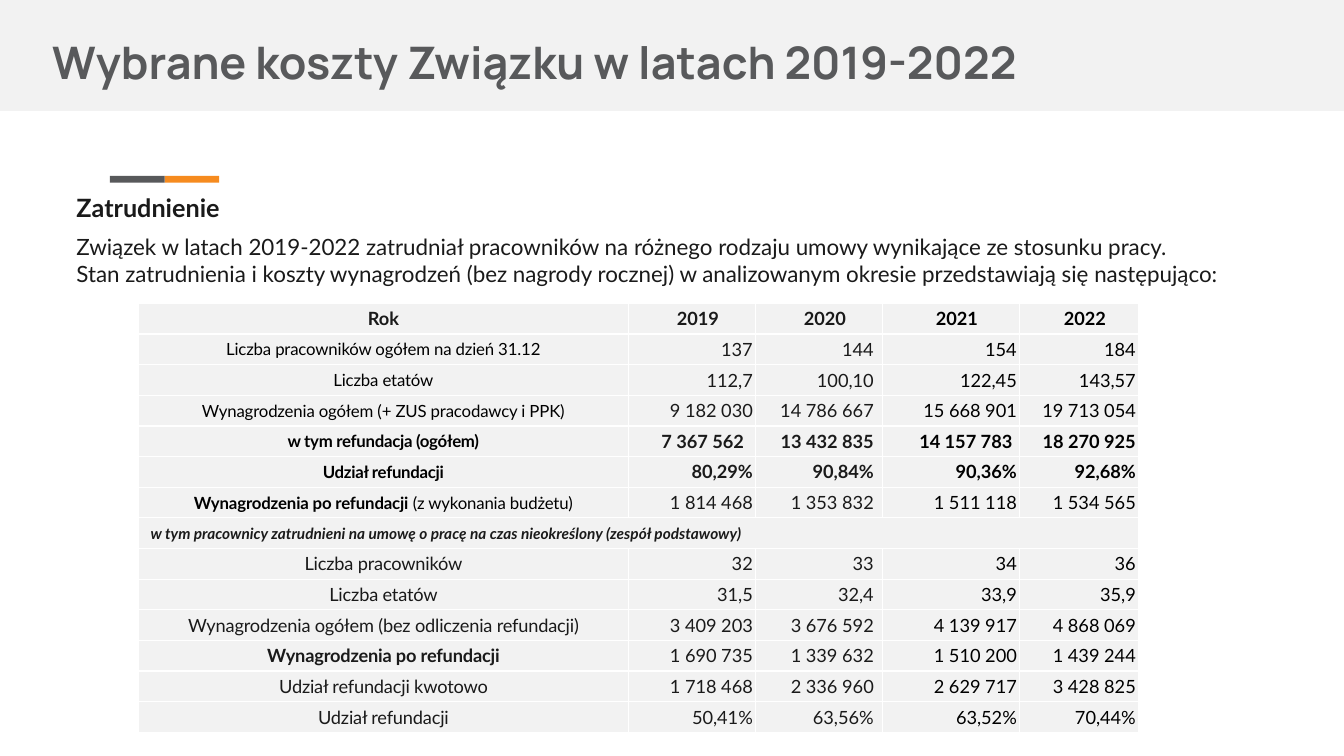
from lxml import etree
from pptx import Presentation
from pptx.dml.color import RGBColor
from pptx.enum.shapes import MSO_SHAPE
from pptx.enum.text import MSO_ANCHOR, PP_ALIGN
from pptx.oxml.ns import qn
from pptx.util import Pt

RECT = MSO_SHAPE.RECTANGLE
MIDDLE = MSO_ANCHOR.MIDDLE
LEFT, CENTER, RIGHT = PP_ALIGN.LEFT, PP_ALIGN.CENTER, PP_ALIGN.RIGHT

COLORS = {"panel": "F2F2F2", "orange": "F68B1F", "gray": "58595B",
          "ink": "1A1A1A", "black": "000000", "white": "FFFFFF"}

INTRO = ("Związek w latach 2019-2022 zatrudniał pracowników na różnego rodzaju "
         "umowy wynikające ze stosunku pracy.\v"
         "Stan zatrudnienia i koszty wynagrodzeń (bez nagrody rocznej) w "
         "analizowanym okresie przedstawiają się następująco:")

# Table content: label runs as (text, bold), yearly values, values in bold
YEARS = ("2019", "2020", "2021", "2022")
TOTAL_ROWS = [
    ([("Liczba pracowników ogółem na dzień 31.12", False)],
     ("137", "144", "154", "184"), False),
    ([("Liczba etatów", False)],
     ("112,7", "100,10", "122,45", "143,57"), False),
    ([("Wynagrodzenia ogółem (+ ZUS pracodawcy i PPK)", False)],
     ("9 182 030", "14 786 667", "15 668 901", "19 713 054"), False),
    ([("w tym refundacja (ogółem)", True)],
     ("7 367 562", "13 432 835", "14 157 783", "18 270 925"), True),
    ([("Udział refundacji", True)],
     ("80,29%", "90,84%", "90,36%", "92,68%"), True),
    ([("Wynagrodzenia po refundacji", True), (" (z wykonania budżetu)", False)],
     ("1 814 468", "1 353 832", "1 511 118", "1 534 565"), False),
]
SECTION = ("w tym pracownicy zatrudnieni na umowę o pracę na czas nieokreślony "
           "(zespół podstawowy)")
CORE_ROWS = [
    ([("Liczba pracowników", False)], ("32", "33", "34", "36"), False),
    ([("Liczba etatów", False)], ("31,5", "32,4", "33,9", "35,9"), False),
    ([("Wynagrodzenia ogółem (bez odliczenia refundacji)", False)],
     ("3 409 203", "3 676 592", "4 139 917", "4 868 069"), False),
    ([("Wynagrodzenia po refundacji", True)],
     ("1 690 735", "1 339 632", "1 510 200", "1 439 244"), False),
    ([("Udział refundacji kwotowo", False)],
     ("1 718 468", "2 336 960", "2 629 717", "3 428 825"), False),
    ([("Udział refundacji", False)],
     ("50,41%", "63,56%", "63,52%", "70,44%"), False),
]
COL_WIDTHS = (350.6, 90.7, 90.7, 97.9, 85)
ROW_HEIGHT = 21.9
VALUE_COLORS = ("ink", "ink", "black", "black")
EXTRA_RIGHT = {"7 367 562": 6.4, "14 157 783": 3.2}


def rgb(name):
    return RGBColor.from_string(COLORS[name])


def style(font, color, **values):
    for key, value in {"name": "Lato", **values}.items():
        setattr(font, key, value)
    font.color.rgb = rgb(color)


def add_bar(s, x, y, w, h, color):
    sp = s.shapes.add_shape(RECT, Pt(x), Pt(y), Pt(w), Pt(h))
    sp.shadow.inherit = False
    sp.fill.solid()
    sp.fill.fore_color.rgb = rgb(color)
    sp.line.fill.background()


def add_text(s, box, text, color, top=3.6, **font):
    tf = s.shapes.add_textbox(*(Pt(v) for v in box)).text_frame
    tf.word_wrap = True
    tf.margin_top = Pt(top)
    p = tf.paragraphs[0]
    p.text = text
    for r in p.runs:
        style(r.font, color, **font)


def add_borders(cell):
    tcPr = cell._tc.get_or_add_tcPr()
    for i, side in enumerate(("lnL", "lnR", "lnT", "lnB")):
        ln = etree.Element(qn("a:" + side), w=str(Pt(1)))
        fill = etree.SubElement(ln, qn("a:solidFill"))
        etree.SubElement(fill, qn("a:srgbClr"), val=COLORS["white"])
        tcPr.insert(i, ln)


def format_cell(cell, left=2.2, right=2.2):
    margins = {"margin_left": left, "margin_right": right,
               "margin_top": 0, "margin_bottom": 0}
    for key, value in margins.items():
        setattr(cell, key, Pt(value))
    cell.vertical_anchor = MIDDLE
    cell.fill.solid()
    cell.fill.fore_color.rgb = rgb("panel")
    add_borders(cell)


def fill_cell(cell, runs, color, align, size, spacing=0, italic=False):
    p = cell.text_frame.paragraphs[0]
    p.alignment = align
    for text, bold in runs:
        r = p.add_run()
        r.text = text
        style(r.font, color, size=Pt(size), bold=bold, italic=italic)
        if spacing:
            r.font._element.set("spc", str(spacing))


def fill_values(table, row, values, bold, align=RIGHT):
    for col, (value, color) in enumerate(zip(values, VALUE_COLORS), 1):
        side = 6.5 if col == 2 else 2.2
        cell = table.cell(row, col)
        # Year headings are nudged right by a wider left margin
        left = side + 8 if align == CENTER else side
        format_cell(cell, left, side + EXTRA_RIGHT.get(value, 0))
        fill_cell(cell, [(value, bold)], color, align, 13)


def fill_rows(table, first, rows, color, size):
    for i, (label, values, bold) in enumerate(rows, first):
        cell = table.cell(i, 0)
        format_cell(cell)
        fill_cell(cell, label, color, CENTER, size, -20 if bold else -10)
        fill_values(table, i, values, bold)


def add_cost_table(s, x, y):
    section_row = len(TOTAL_ROWS) + 1
    count = section_row + 1 + len(CORE_ROWS)
    table = s.shapes.add_table(count, len(COL_WIDTHS), Pt(x), Pt(y),
                               Pt(sum(COL_WIDTHS)), Pt(count * ROW_HEIGHT)).table
    table.first_row = table.horz_banding = False
    for col, width in zip(table.columns, COL_WIDTHS):
        col.width = Pt(width)
    for row in table.rows:
        row.height = Pt(ROW_HEIGHT)

    # Heading row
    format_cell(table.cell(0, 0))
    fill_cell(table.cell(0, 0), [("Rok", True)], "ink", CENTER, 13)
    fill_values(table, 0, YEARS, True, CENTER)

    # All staff, then the core team under its own heading
    fill_rows(table, 1, TOTAL_ROWS, "black", 12)
    for col in range(len(COL_WIDTHS)):
        format_cell(table.cell(section_row, col), 9)
    heading = table.cell(section_row, 0)
    heading.merge(table.cell(section_row, len(COL_WIDTHS) - 1))
    fill_cell(heading, [(SECTION, True)], "ink", LEFT, 11, italic=True)
    fill_rows(table, section_row + 1, CORE_ROWS, "ink", 13)


def main():
    prs = Presentation()
    prs.slide_width, prs.slide_height = Pt(960), Pt(540)
    s = prs.slides.add_slide(prs.slide_layouts[6])

    # Title band and accent
    add_bar(s, 0, 0, 960, 79.2, "panel")
    add_bar(s, 117.7, 125.6, 38.9, 5, "orange")
    add_bar(s, 78.5, 125.6, 39.2, 5, "gray")
    add_text(s, (30.2, 0, 807, 80), "Wybrane koszty Związku w latach 2019-2022",
             "gray", top=24.5, name="Manrope", size=Pt(32), bold=True)

    # Introduction
    add_text(s, (47.5, 134, 723.6, 28.8), "Zatrudnienie", "ink",
             size=Pt(18), bold=True)
    add_text(s, (47.5, 162.7, 879, 46), INTRO, "ink", size=Pt(16))

    add_cost_table(s, 98.6, 216.7)
    prs.save("out.pptx")


if __name__ == "__main__":
    main()
